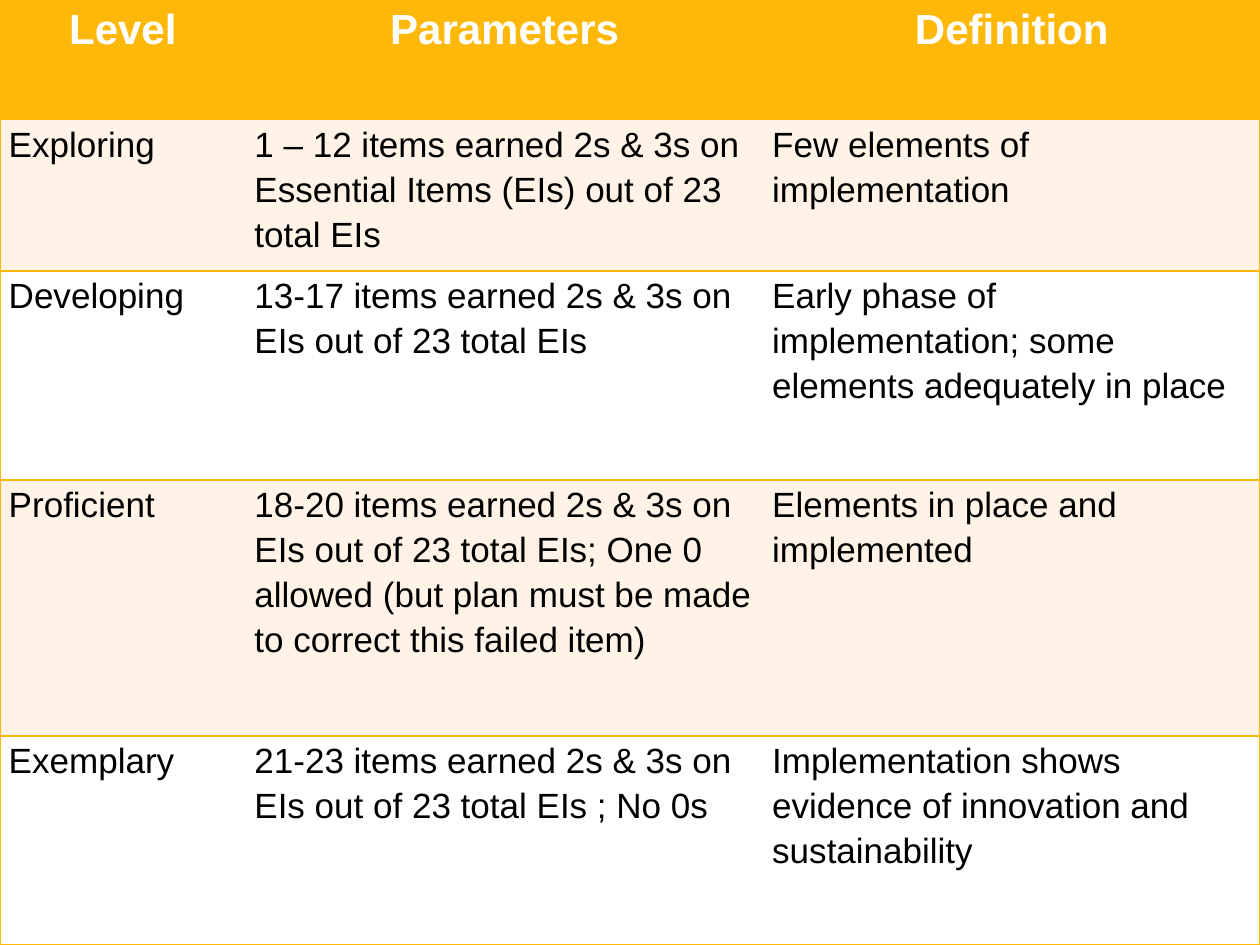
import lxml.etree
import pptx
import pptx.dml.color
import pptx.enum.text
import pptx.oxml.ns
import pptx.util

Pt = pptx.util.Pt
GOLD, CREAM, WHITE, BLACK = "FEB80A", "FFF3E7", "FFFFFF", "000000"
COL_WIDTHS = [140.4, 295.9, 283.7]
ROW_HEIGHTS = [68.4, 86.4, 119.5, 146.2, 119.5]
ROWS = [
    ("Level", "Parameters", "Definition"),
    ("Exploring",
     "1 – 12 items earned 2s & 3s on Essential Items (EIs) out of 23 total EIs",
     "Few elements of implementation"),
    ("Developing",
     "13-17 items earned 2s & 3s on EIs out of 23 total EIs",
     "Early phase of implementation; some elements adequately in place"),
    ("Proficient",
     "18-20 items earned 2s & 3s on EIs out of 23 total EIs; One 0 allowed "
     "(but plan must be made to correct this failed item)",
     "Elements in place and implemented"),
    ("Exemplary",
     "21-23 items earned 2s & 3s on EIs out of 23 total EIs ; No 0s",
     "Implementation shows evidence of innovation and sustainability"),
]


def rgb(color):
    return pptx.dml.color.RGBColor.from_string(color)


def set_borders(cell, visible):
    """Draw gold lines on the sides named in visible (L, R, T, B), none elsewhere."""
    qn = pptx.oxml.ns.qn
    tcPr = cell._tc.get_or_add_tcPr()
    for i, side in enumerate("LRTB"):
        ln = lxml.etree.Element(qn(f"a:ln{side}"), w=str(Pt(1)))
        if side in visible:
            fill = lxml.etree.SubElement(ln, qn("a:solidFill"))
            lxml.etree.SubElement(fill, qn("a:srgbClr"), val=GOLD)
        else:
            lxml.etree.SubElement(ln, qn("a:noFill"))
        tcPr.insert(i, ln)


def fill_cell(cell, text, fill, color, size, bold, align, space_after):
    cell.fill.solid()
    cell.fill.fore_color.rgb = rgb(fill)
    cell.margin_left = cell.margin_right = Pt(5)
    cell.margin_top = cell.margin_bottom = 0
    p = cell.text_frame.paragraphs[0]
    p.alignment = align
    p.line_spacing = 1.15
    p.space_after = Pt(space_after)
    r = p.add_run()
    r.text = text
    r.font.name = "Arial"
    r.font.size = Pt(size)
    r.font.bold = bold
    r.font.color.rgb = rgb(color)


def add_level_table(s):
    table = s.shapes.add_table(len(ROWS), len(COL_WIDTHS), 0, 0, Pt(720), Pt(540)).table
    table.horz_banding = False
    for column, width in zip(table.columns, COL_WIDTHS):
        column.width = Pt(width)
    for row, height in zip(table.rows, ROW_HEIGHTS):
        row.height = Pt(height)

    align = pptx.enum.text.PP_ALIGN
    outer_sides = ["LTB", "TB", "RTB"]
    for i, texts in enumerate(ROWS):
        for j, text in enumerate(texts):
            cell = table.cell(i, j)
            if i == 0:
                fill_cell(cell, text, GOLD, WHITE, 24, True, align.CENTER, 10)
            else:
                fill = CREAM if i % 2 else WHITE
                space_after = 0 if j == 1 else 10
                fill_cell(cell, text, fill, BLACK, 20, False, align.LEFT, space_after)
            set_borders(cell, outer_sides[j])


def main():
    prs = pptx.Presentation()
    prs.slide_width, prs.slide_height = Pt(720), Pt(540)
    s = prs.slides.add_slide(prs.slide_layouts[6])
    add_level_table(s)
    prs.save("out.pptx")


if __name__ == "__main__":
    main()
